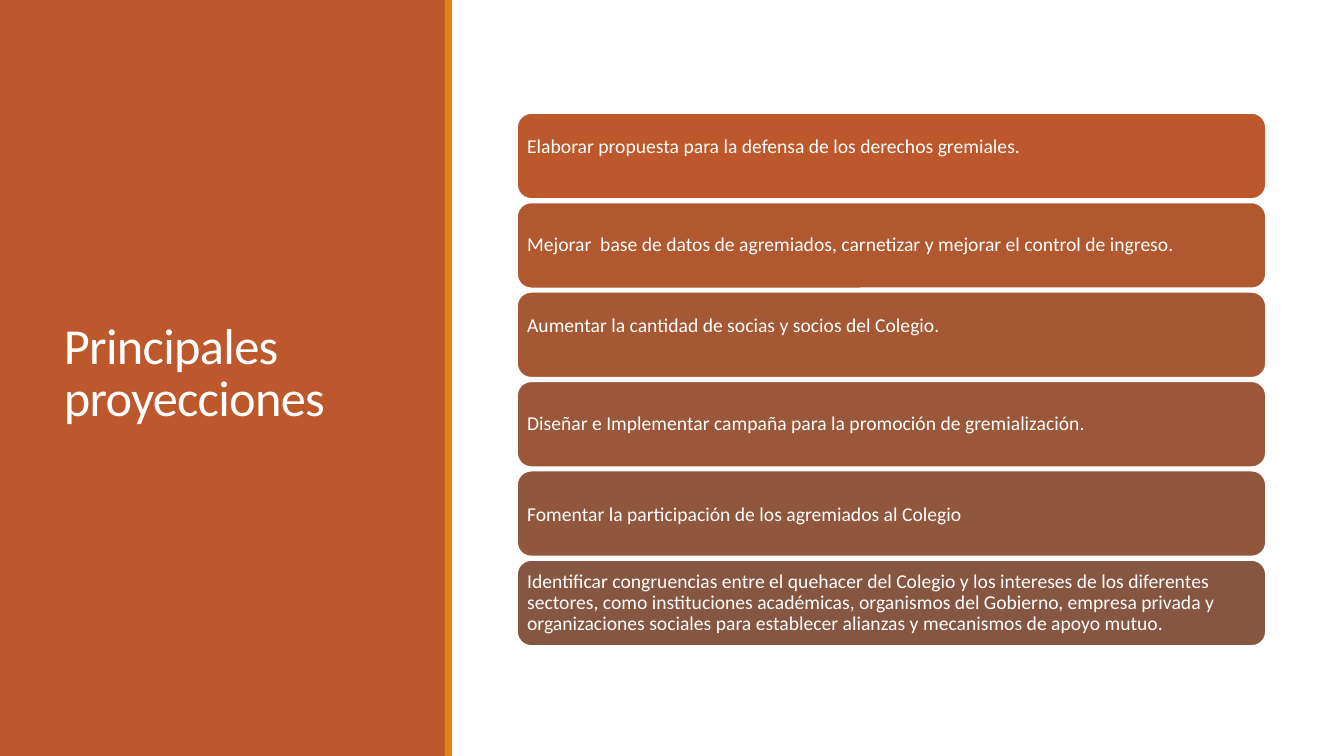
"""Build the slide of main projections: a title panel and six stacked cards."""
from pptx import Presentation, util as u
from pptx.dml.color import RGBColor
from pptx.enum import shapes, text

W, H = 1344, 756
EMU_PER_PX = 914400 / 100.8
FONT, WHITE, RUST, ORANGE = "Calibri", "FFFFFF", "BD582C", "E48312"
TITLE = "Principales proyecciones"
CARD_X, CARD_Y, CARD_W, CARD_H = 517, 113, 749, 86
LAST_CARD_OFFSET = 447
INSET = 6

# text, fill, line spacing, upward lift of the text
CARDS = [
    ("Elaborar propuesta para la defensa de los derechos gremiales.", RUST, 1, 10),
    ("Mejorar  base de datos de agremiados, carnetizar y mejorar el control de ingreso.",
     "B15831", 0.9, 0),
    ("Aumentar la cantidad de socias y socios del Colegio.", "A65835", 1, 10),
    ("Diseñar e Implementar campaña para la promoción de gremialización.",
     "9B5739", 0.9, 0),
    ("Fomentar la participación de los agremiados al Colegio", "90573D", 1, 0),
    ("Identificar congruencias entre el quehacer del Colegio y los intereses de los "
     "diferentes sectores, como instituciones académicas, organismos del Gobierno, "
     "empresa privada y organizaciones sociales para establecer alianzas y mecanismos "
     "de apoyo mutuo.", "865640", 0.9, 0),
]


def px(n):
    return u.Emu(round(n * EMU_PER_PX))


def rgb(color):
    return RGBColor.from_string(color)


def add_block(s, kind, box, fill, line=None):
    sp = s.shapes.add_shape(kind, *map(px, box))
    sp.shadow.inherit = False
    sp.fill.solid()
    sp.fill.fore_color.rgb = rgb(fill)
    if line:
        sp.line.color.rgb = rgb(line)
        sp.line.width = u.Pt(1.25)
    else:
        sp.line.fill.background()
    return sp


def write(sp, words, size, spacing):
    tf = sp.text_frame
    tf.word_wrap = True
    tf.vertical_anchor = text.MSO_ANCHOR.MIDDLE
    p = tf.paragraphs[0]
    p.alignment = text.PP_ALIGN.LEFT
    p.line_spacing = spacing
    r = p.add_run()
    r.text = words
    r.font.name, r.font.size = FONT, u.Pt(size)
    r.font.color.rgb = rgb(WHITE)
    return r


def main():
    prs = Presentation()
    prs.slide_width, prs.slide_height = px(W), px(H)
    s = prs.slides.add_slide(prs.slide_layouts[6])

    rect, rounded = shapes.MSO_SHAPE.RECTANGLE, shapes.MSO_SHAPE.ROUNDED_RECTANGLE
    add_block(s, rect, (0, 0, 446, H), RUST)
    add_block(s, rect, (445, 0, 7, H), ORANGE)

    title = s.shapes.add_textbox(*map(px, (54, 57, 340, 636)))
    r = write(title, TITLE, 36, 0.85)
    r.font._element.set("spc", "-50")

    pitch = LAST_CARD_OFFSET / (len(CARDS) - 1)
    for i, (words, fill, spacing, lift) in enumerate(CARDS):
        box = (CARD_X, CARD_Y + i * pitch, CARD_W, CARD_H)
        card = add_block(s, rounded, box, fill, WHITE)
        tf = card.text_frame
        tf.margin_left = tf.margin_right = tf.margin_top = px(INSET)
        tf.margin_bottom = px(INSET + 2 * lift)
        write(card, words, 14, spacing)

    prs.save("out.pptx")


if __name__ == "__main__":
    main()
